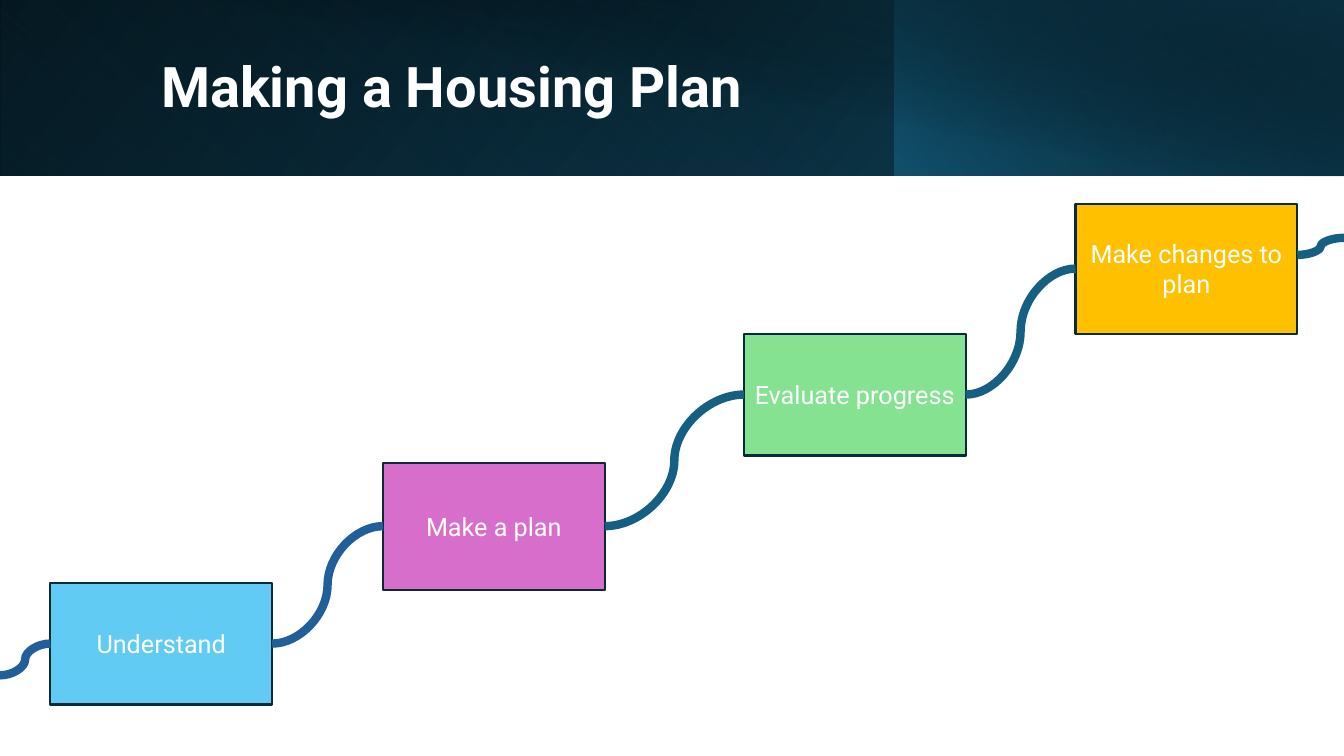
from lxml import etree
from pptx import Presentation
from pptx.dml.color import RGBColor
from pptx.enum.shapes import MSO_CONNECTOR, MSO_SHAPE
from pptx.enum.text import MSO_ANCHOR, PP_ALIGN
from pptx.oxml.ns import qn
from pptx.util import Pt

RECTANGLE = MSO_SHAPE.RECTANGLE
CURVE = MSO_CONNECTOR.CURVE
MIDDLE = MSO_ANCHOR.MIDDLE
LEFT, CENTER = PP_ALIGN.LEFT, PP_ALIGN.CENTER
LEFT_SITE, RIGHT_SITE = 1, 3

SLIDE_WIDTH, SLIDE_HEIGHT = 960, 540
STEP_WIDTH = 158.4
WHITE, OUTLINE = "FFFFFF", "092A39"
BLUE, TEAL = "215F9A", "156082"

TITLE_FONT = {"name": "Roboto", "size": Pt(40), "bold": True}
STEP_FONT = {"name": "Roboto", "size": Pt(18), "bold": False}

# Header layers: left, width, height, rotation, flipped, angle,
# gradient stops as (position %, colour, opacity %)
HEADER_LAYERS = [
    (0, 960, 125.28, 0, True, 140, [(0, "000000", 100), (100, "104862", 100)]),
    (0, 639.36, 125.28, 180, True, 230, [(20, TEAL, 0), (100, "0B3041", 55)]),
    (638.64, 321.36, 125.28, 0, True, 220, [(0, TEAL, 66), (100, "000000", 30)]),
    (36, 924, 126, 0, False, 280, [(50, "000000", 0), (99, "0B3041", 52)]),
]

# Steps: text, left, top, height, fill
STEPS = [
    ("Understand", 36, 416.16, 87.12, "61CBF4"),
    ("Make a plan", 273.6, 330.48, 90.72, "D86ECC"),
    ("Evaluate progress", 531.36, 238.32, 87.12, "84E291"),
    ("Make changes to plan", 768.24, 145.44, 92.88, "FFC000"),
]


def color(value):
    return RGBColor.from_string(value)


def write_text(shape, text, font_format, alignment, line_spacing=1.0):
    frame = shape.text_frame
    frame.word_wrap = True
    frame.vertical_anchor = MIDDLE
    paragraph = frame.paragraphs[0]
    paragraph.text = text
    paragraph.alignment = alignment
    paragraph.line_spacing = line_spacing
    for name, value in font_format.items():
        setattr(paragraph.font, name, value)
    paragraph.font.color.rgb = color(WHITE)


def add_rectangle(slide, left, top, width, height):
    shape = slide.shapes.add_shape(
        RECTANGLE, Pt(left), Pt(top), Pt(width), Pt(height))
    shape.shadow.inherit = False
    return shape


def add_gradient_layer(slide, left, width, height, rotation, flipped, angle, stops):
    shape = add_rectangle(slide, left, 0, width, height)
    shape.rotation = rotation
    shape.line.fill.background()
    properties = shape._element.spPr
    if flipped:
        properties.find(qn("a:xfrm")).set("flipH", "1")

    # Gradient with see-through stops
    gradient = etree.Element(qn("a:gradFill"), rotWithShape="1")
    stop_list = etree.SubElement(gradient, qn("a:gsLst"))
    for position, value, opacity in stops:
        stop = etree.SubElement(stop_list, qn("a:gs"), pos=str(position * 1000))
        stop_color = etree.SubElement(stop, qn("a:srgbClr"), val=value)
        if opacity < 100:
            etree.SubElement(stop_color, qn("a:alpha"), val=str(opacity * 1000))
    etree.SubElement(gradient, qn("a:lin"), ang=str(angle * 60000), scaled="0")
    properties.find(qn("a:prstGeom")).addnext(gradient)


def add_title(slide, text):
    box = slide.shapes.add_textbox(Pt(108), Pt(23.04), Pt(779.04), Pt(81.36))
    write_text(box, text, TITLE_FONT, LEFT, 0.9)


def add_step(slide, text, left, top, height, fill):
    shape = add_rectangle(slide, left, top, STEP_WIDTH, height)
    shape.fill.solid()
    shape.fill.fore_color.rgb = color(fill)
    shape.line.color.rgb = color(OUTLINE)
    shape.line.width = Pt(1.5)
    write_text(shape, text, STEP_FONT, CENTER)
    return shape


def add_curve(slide, start, end, line_color):
    points = [Pt(value) for value in (*start, *end)]
    connector = slide.shapes.add_connector(CURVE, *points)
    connector.line.color.rgb = color(line_color)
    connector.line.width = Pt(6)
    etree.SubElement(connector._element.spPr, qn("a:effectLst"))
    return connector


def main():
    presentation = Presentation()
    presentation.slide_width = Pt(SLIDE_WIDTH)
    presentation.slide_height = Pt(SLIDE_HEIGHT)
    slide = presentation.slides.add_slide(presentation.slide_layouts[6])

    # Header
    for layer in HEADER_LAYERS:
        add_gradient_layer(slide, *layer)
    add_title(slide, "Making a Housing Plan")

    # Rising steps
    steps = [add_step(slide, *step) for step in STEPS]

    # Curves between neighbouring steps
    for before, after, line_color in zip(steps, steps[1:], (BLUE, TEAL, TEAL)):
        connector = add_curve(slide, (0, 0), (0, 0), line_color)
        connector.begin_connect(before, RIGHT_SITE)
        connector.end_connect(after, LEFT_SITE)

    # Curves running off the slide edges
    add_curve(slide, (926.64, 182.16), (SLIDE_WIDTH, 169.92), TEAL)
    entry = add_curve(slide, (36, 459.72), (0, 482.4), BLUE)
    entry.begin_connect(steps[0], LEFT_SITE)

    presentation.save("out.pptx")


if __name__ == "__main__":
    main()
